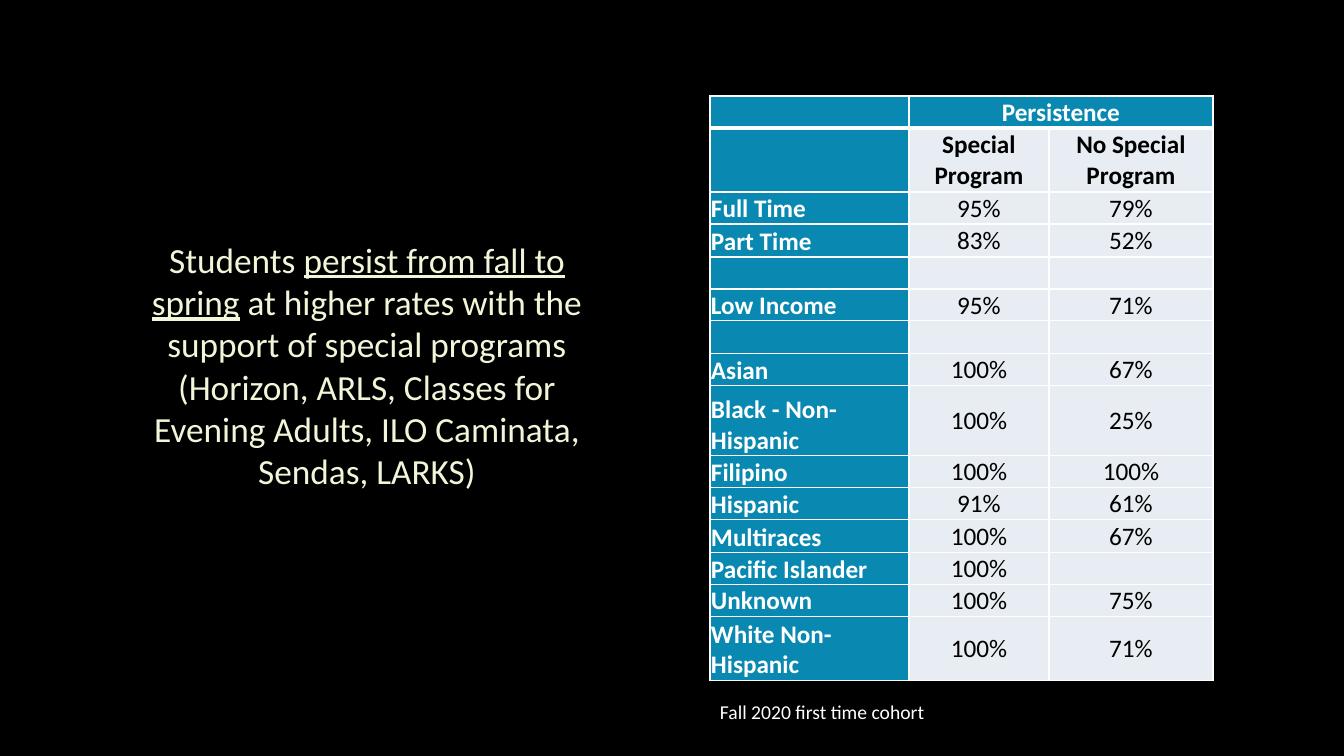
from lxml import etree
from pptx import Presentation
from pptx import util as u
from pptx.dml.color import RGBColor
from pptx.enum import text
from pptx.oxml import ns

ROWS = [
    (32, "", "Persistence", ""),
    (64, "", "Special Program", "No Special Program"),
    (32, "Full Time", "95%", "79%"),
    (33, "Part Time", "83%", "52%"),
    (32, "", "", ""),
    (32, "Low Income", "95%", "71%"),
    (33, "", "", ""),
    (32, "Asian", "100%", "67%"),
    (70, "Black - Non-Hispanic", "100%", "25%"),
    (32, "Filipino", "100%", "100%"),
    (32, "Hispanic", "91%", "61%"),
    (33, "Multiraces", "100%", "67%"),
    (32, "Pacific Islander", "100%", ""),
    (32, "Unknown", "100%", "75%"),
    (64, "White Non-Hispanic", "100%", "71%"),
]
COLUMN_WIDTHS = [199, 140, 164]
MESSAGE = [
    ("Students ", False),
    ("persist from fall to spring", True),
    (" at higher rates with the support of special programs (Horizon, ARLS, "
     "Classes for Evening Adults, ILO Caminata, Sendas, LARKS)", False),
]


def px(length):
    return u.Emu(round(length * 914400 / 100.8))


def rgb(value):
    return RGBColor.from_string(value)


def write(frame, pieces, size=18, color="000000", bold=False, align="LEFT", font="Calibri"):
    paragraph = frame.paragraphs[0]
    paragraph.alignment = getattr(text.PP_ALIGN, align)
    for words, underline in pieces:
        run = paragraph.add_run()
        run.text = words
        run.font.name = font
        run.font.size = u.Pt(size)
        run.font.bold = bold
        run.font.underline = underline
        run.font.color.rgb = rgb(color)
    if not pieces:
        etree.SubElement(paragraph._p, ns.qn("a:endParaRPr"), sz=str(size * 100))


class PersistenceSlide:
    """Draws the elements of the persistence slide in one style."""

    teal, pale, white, black, cream = "0989B1", "E7EDF2", "FFFFFF", "000000", "F2F5D7"

    def __init__(self, deck):
        self.slide = deck.slides.add_slide(deck.slide_layouts[6])
        self.slide.background.fill.solid()
        self.slide.background.fill.fore_color.rgb = rgb(self.black)

    def label(self, left, top, width, height, pieces, wrap=True, **style):
        frame = self.slide.shapes.add_textbox(px(left), px(top), px(width), px(height)).text_frame
        frame.word_wrap = wrap
        frame.vertical_anchor = text.MSO_ANCHOR.MIDDLE
        write(frame, pieces, **style)

    def borders(self, cell, top, bottom):
        properties = cell._tc.get_or_add_tcPr()
        for place, (side, points) in enumerate(zip("LRTB", (1, 1, top, bottom))):
            line = etree.Element(ns.qn(f"a:ln{side}"), w=str(u.Pt(points)))
            fill = etree.SubElement(line, ns.qn("a:solidFill"))
            etree.SubElement(fill, ns.qn("a:srgbClr"), val=self.white)
            properties.insert(place, line)

    def cell(self, cell, words, row, column):
        is_label = column == 0
        is_teal = is_label or row == 0
        cell.margin_left = cell.margin_right = cell.margin_top = px(1)
        cell.margin_bottom = 0
        cell.vertical_anchor = text.MSO_ANCHOR.BOTTOM if is_teal else text.MSO_ANCHOR.MIDDLE
        cell.fill.solid()
        cell.fill.fore_color.rgb = rgb(self.teal if is_teal else self.pale)
        self.borders(cell, top=3 if row == 1 else 1, bottom=3 if row == 0 else 1)
        write(cell.text_frame, [(words, False)] if words else [],
              color=self.white if is_teal else self.black,
              bold=is_label or row < 2, align="LEFT" if is_label else "CENTER")

    def table(self, left, top, widths, rows):
        table = self.slide.shapes.add_table(
            len(rows), len(widths), px(left), px(top),
            px(sum(widths)), px(sum(height for height, *_ in rows))).table
        table.first_row = table.horz_banding = False
        for column, width in zip(table.columns, widths):
            column.width = px(width)
        for row, (height, *entries) in enumerate(rows):
            table.rows[row].height = px(height)
            for column, words in enumerate(entries):
                self.cell(table.cell(row, column), words, row, column)
        table.cell(0, 1).merge(table.cell(0, 2))


def main():
    deck = Presentation()
    deck.slide_width, deck.slide_height = px(1344), px(756)
    page = PersistenceSlide(deck)
    page.label(120, 228, 494, 274, MESSAGE, size=25.2, color=page.cream, align="CENTER")
    page.table(710, 96, COLUMN_WIDTHS, ROWS)
    page.label(710, 695, 227, 34, [("Fall 2020 first time cohort", False)],
               wrap=False, size=14, color=page.white)
    deck.save("out.pptx")


if __name__ == "__main__":
    main()
